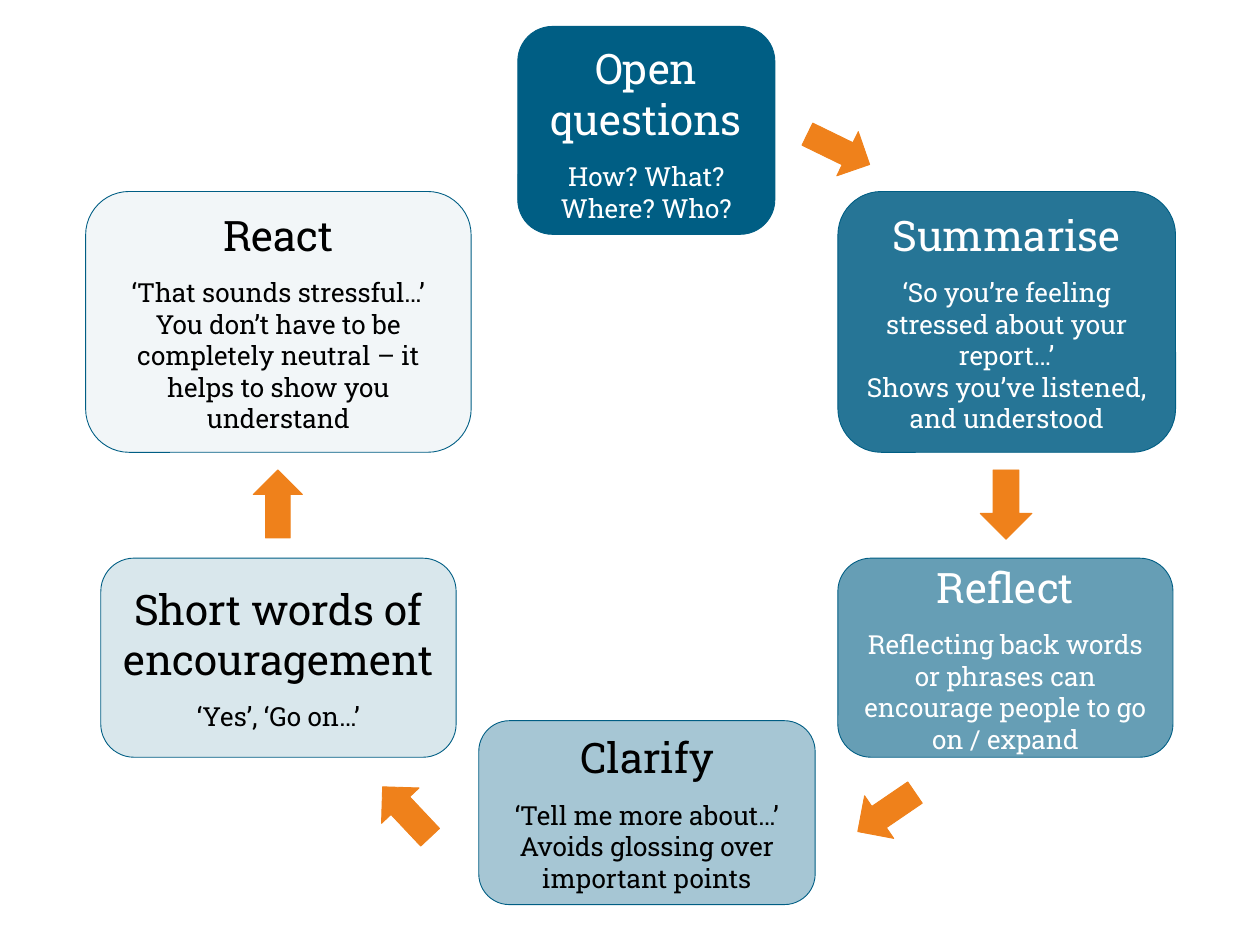
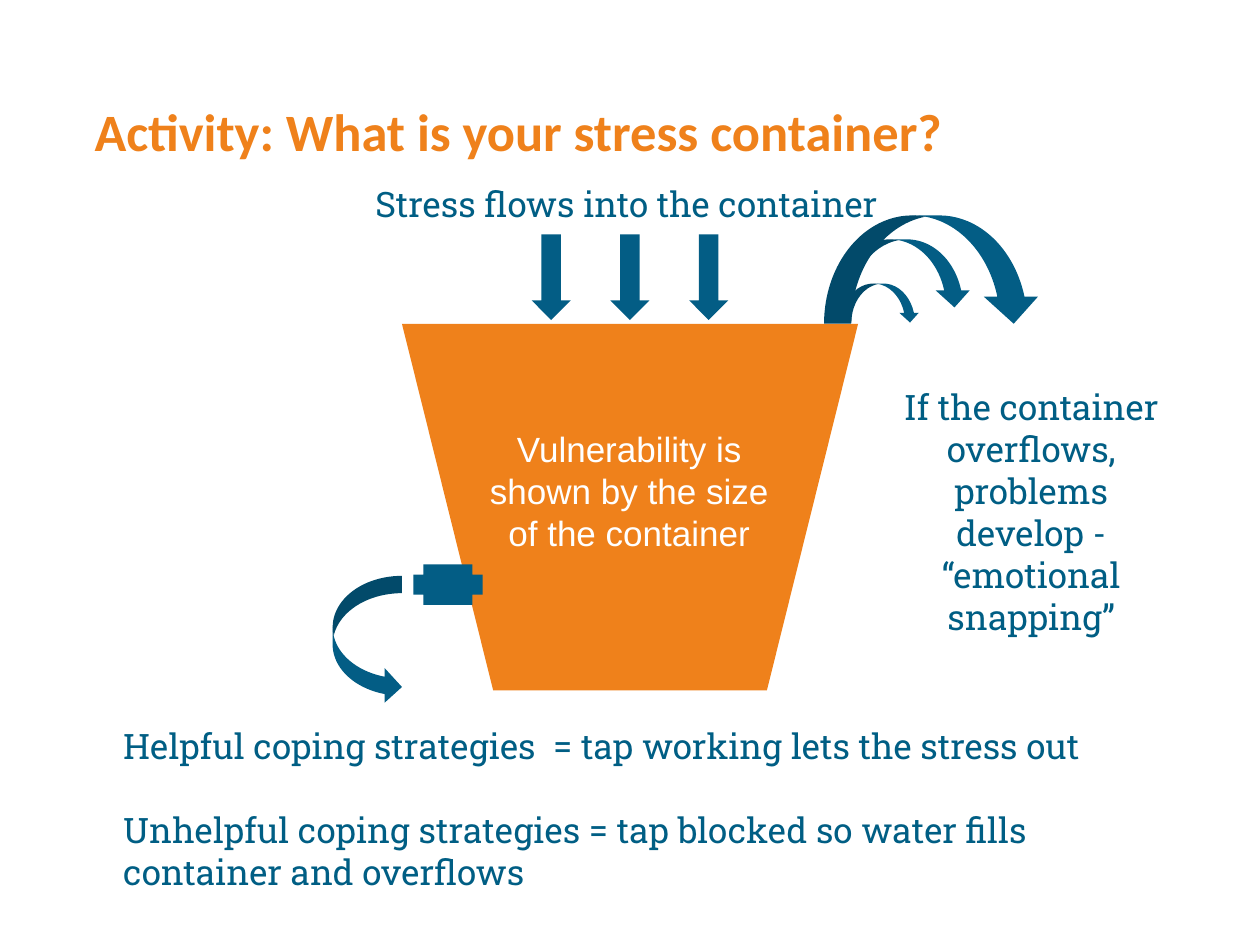
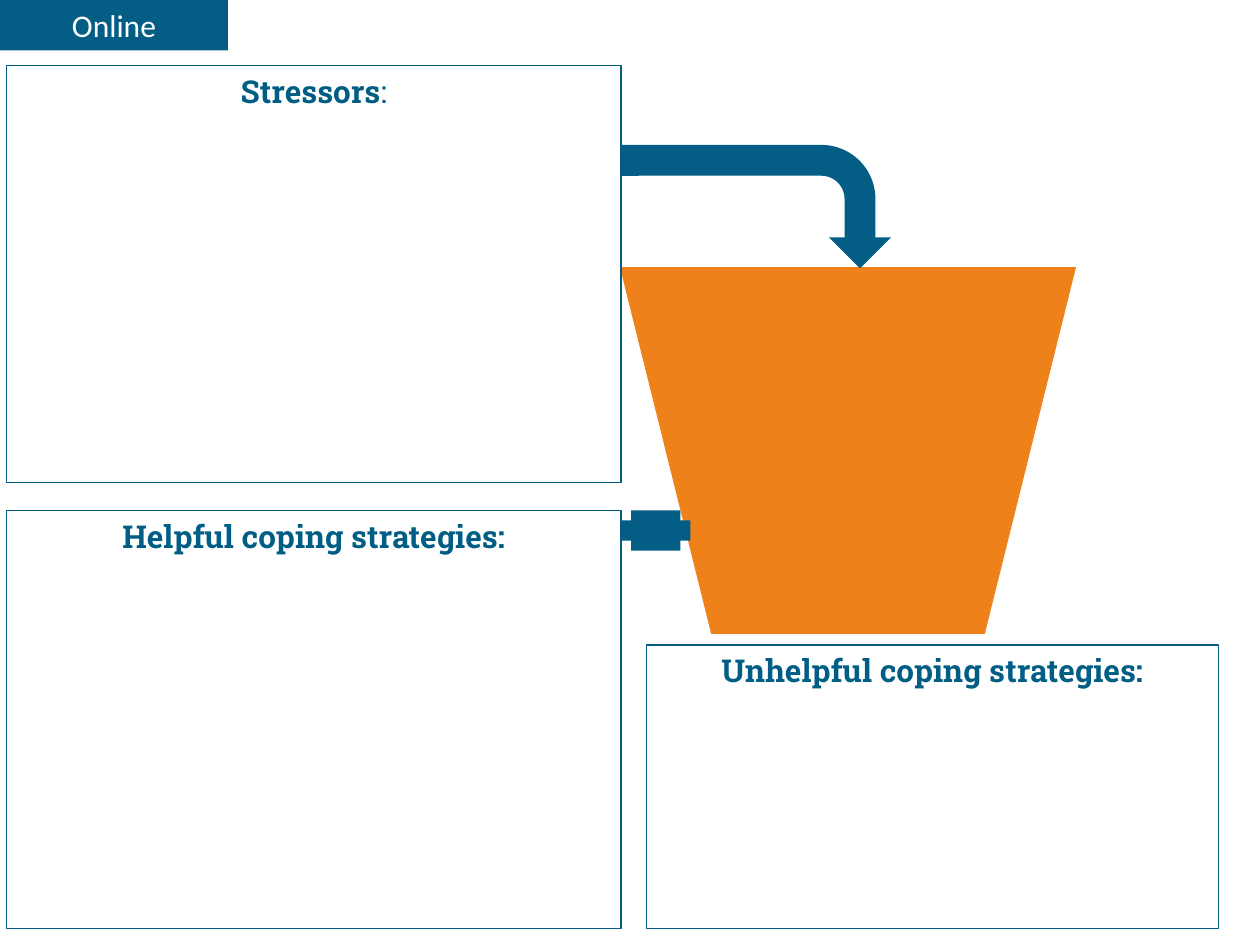
import lxml.etree
import pptx
import pptx.dml.color
import pptx.enum.shapes
import pptx.enum.text
import pptx.oxml.ns
import pptx.util

Inches = pptx.util.Inches
Pt = pptx.util.Pt
KIND = pptx.enum.shapes.MSO_SHAPE
ALIGN = pptx.enum.text.PP_ALIGN
ANCHOR = pptx.enum.text.MSO_ANCHOR

COLORS = {
    "deep": "005E84",
    "blue": "035D85",
    "orange": "EF811B",
    "white": "FFFFFF",
    "black": "000000",
}
SLAB = "Roboto Slab"

CARDS = [
    ((4.11, 0.21, 2.04, 1.65), 100, "white", "Open questions",
     ["How? What? Where? Who?"]),
    ((6.65, 1.52, 2.68, 2.07), 85, "white", "Summarise",
     ["‘So you’re feeling stressed about your report…’",
      "Shows you’ve listened, and understood"]),
    ((6.65, 4.43, 2.66, 1.58), 60, "white", "Reflect",
     ["Reflecting back words or phrases can encourage people to go on / expand"]),
    ((3.8, 5.72, 2.67, 1.46), 35, "black", "Clarify",
     ["‘Tell me more about…’", "Avoids glossing over important points"]),
    ((0.68, 1.52, 3.06, 2.07), 5, "black", "React",
     ["‘That sounds stressful…’",
      "You don’t have to be completely neutral – it helps to show you understand"]),
    ((0.8, 4.43, 2.82, 1.58), 15, "black", "Short words of encouragement",
     ["‘Yes’, ‘Go on…’"]),
]

TURNS = [
    (KIND.RIGHT_ARROW, (6.38, 0.99, 0.55, 0.39), 26),
    (KIND.DOWN_ARROW, (6.83, 6.17, 0.41, 0.55), 55.7),
    (KIND.UP_ARROW, (2.01, 3.73, 0.39, 0.54), 0),
    (KIND.DOWN_ARROW, (7.78, 3.73, 0.41, 0.55), 0),
    (KIND.DOWN_ARROW, (3.02, 6.17, 0.41, 0.55), 136.7),
]

SPILLS = [
    (6.54, 1.71, 1.72, 0.86),
    (6.62, 1.9, 1.09, 0.54),
    (6.68, 2.25, 0.62, 0.31),
]

PANELS = [
    ((0.05, 0.52, 4.88, 3.31), [("Stressors", True), (":", False)]),
    ((0.05, 4.05, 4.88, 3.32), [("Helpful coping strategies:", True)]),
    ((5.13, 5.12, 4.54, 2.25), [("Unhelpful coping strategies:", True)]),
]


def tint(name):
    return pptx.dml.color.RGBColor.from_string(COLORS[name])


def add_shape(slide, kind, box, fill=None, line=None, width=0.5, turn=0):
    shape = slide.shapes.add_shape(kind, *map(Inches, box))
    shape.shadow.inherit = False
    shape.rotation = turn
    if fill:
        shape.fill.solid()
        shape.fill.fore_color.rgb = tint(fill)
    else:
        shape.fill.background()
    if line:
        shape.line.color.rgb = tint(line)
        shape.line.width = Pt(width)
    else:
        shape.line.fill.background()
    return shape


def fade(shape, percent):
    color = shape.element.spPr.find(
        pptx.oxml.ns.qn("a:solidFill") + "/" + pptx.oxml.ns.qn("a:srgbClr"))
    alpha = lxml.etree.SubElement(color, pptx.oxml.ns.qn("a:alpha"))
    alpha.set("val", str(percent * 1000))


def add_run(para, text, size, color, font=SLAB, bold=False):
    run = para.add_run()
    run.text = text
    run.font.size = Pt(size)
    run.font.name = font
    run.font.bold = bold
    run.font.color.rgb = tint(color)


def next_para(frame, index, align, gap=0):
    para = frame.add_paragraph() if index else frame.paragraphs[0]
    para.alignment = align
    if gap:
        para.space_before = Pt(gap)
    return para


def add_note(slide, box, lines, color="deep", font=SLAB, align=ALIGN.LEFT, gap=24):
    frame = slide.shapes.add_textbox(*map(Inches, box)).text_frame
    frame.word_wrap = True
    for index, text in enumerate(lines):
        para = next_para(frame, index, align, gap if index else 0)
        add_run(para, text, 20, color, font)


def add_card(slide, box, strength, ink, head, lines):
    card = add_shape(slide, KIND.ROUNDED_RECTANGLE, box, "deep", "deep")
    if strength < 100:
        fade(card, strength)
    frame = card.text_frame
    frame.word_wrap = True
    frame.vertical_anchor = ANCHOR.TOP if strength == 100 else ANCHOR.MIDDLE
    add_run(next_para(frame, 0, ALIGN.CENTER), head, 24, ink)
    for index, text in enumerate(lines, 1):
        para = next_para(frame, index, ALIGN.CENTER, 9.6 if index == 1 else 0)
        add_run(para, text, 15, ink)


def add_label(shape, runs, color, font=SLAB):
    frame = shape.text_frame
    frame.word_wrap = True
    frame.vertical_anchor = ANCHOR.TOP
    para = next_para(frame, 0, ALIGN.CENTER)
    for text, bold in runs:
        add_run(para, text, 18, color, font, bold)


def add_bucket(slide, left, top):
    add_shape(slide, KIND.FLOWCHART_MANUAL_OPERATION, (left, top, 3.62, 2.91), "orange")


def add_tap(slide, left, top):
    add_shape(slide, KIND.CROSS, (left, top, 0.55, 0.32), "blue")


def set_title(slide, text):
    title = slide.shapes.title
    title.left, title.top = Inches(0.75), Inches(0.84)
    title.width, title.height = Inches(7.8), Inches(1.81)
    frame = title.text_frame
    frame.auto_size = pptx.enum.text.MSO_AUTO_SIZE.NONE
    frame.word_wrap = True
    frame.vertical_anchor = ANCHOR.TOP
    frame.margin_left = frame.margin_right = 0
    frame.margin_top = frame.margin_bottom = 0
    para = next_para(frame, 0, ALIGN.LEFT)
    para.line_spacing = 0.9
    add_run(para, text, 30, "orange", "Calibri", True)


def build_cycle(slide):
    for card in CARDS:
        add_card(slide, *card)
    for kind, box, turn in TURNS:
        add_shape(slide, kind, box, "orange", "orange", turn=turn)


def build_stress(slide):
    set_title(slide, "Activity: What is your stress container?")
    add_bucket(slide, 3.19, 2.57)
    add_note(slide, (3.66, 3.34, 2.67, 1.11),
             ["Vulnerability is shown by the size of the container"],
             "white", "Arial", ALIGN.CENTER)
    add_note(slide, (2.88, 1.4, 4.38, 0.44), ["Stress flows into the container"])
    add_note(slide, (0.88, 5.7, 8.24, 1.82),
             ["Helpful coping strategies  = tap working lets the stress out",
              "Unhelpful coping strategies = tap blocked so water fills "
              "container and overflows"])
    add_note(slide, (6.95, 3.01, 2.47, 2.12),
             ["If the container overflows, problems develop - “emotional snapping”"],
             align=ALIGN.CENTER)
    for index in range(3):
        add_shape(slide, KIND.DOWN_ARROW, (4.22 + index * 0.625, 1.86, 0.31, 0.68), "blue")
    for box in SPILLS:
        add_shape(slide, KIND.CURVED_DOWN_ARROW, box, "blue")
    add_tap(slide, 3.28, 4.48)
    add_shape(slide, KIND.CURVED_RIGHT_ARROW, (2.64, 4.57, 0.55, 1.02), "blue")


def build_sheet(slide):
    add_bucket(slide, 4.92, 2.12)
    add_tap(slide, 4.93, 4.05)
    for box, runs in PANELS:
        panel = add_shape(slide, KIND.RECTANGLE, box, line="blue", width=0.75)
        add_label(panel, runs, "deep")
    add_shape(slide, KIND.BENT_ARROW, (5.51, 0.57, 0.98, 2.14), "blue", turn=90)
    band = add_shape(slide, KIND.RECTANGLE, (0, 0, 1.81, 0.4), "blue")
    add_label(band, [("Online", False)], "white", "Calibri")


def main():
    deck = pptx.Presentation()
    deck.slide_width, deck.slide_height = Inches(10), Inches(7.5)
    titled, blank = deck.slide_layouts[5], deck.slide_layouts[6]
    build_cycle(deck.slides.add_slide(blank))
    build_stress(deck.slides.add_slide(titled))
    build_sheet(deck.slides.add_slide(blank))
    deck.save("out.pptx")


if __name__ == "__main__":
    main()
